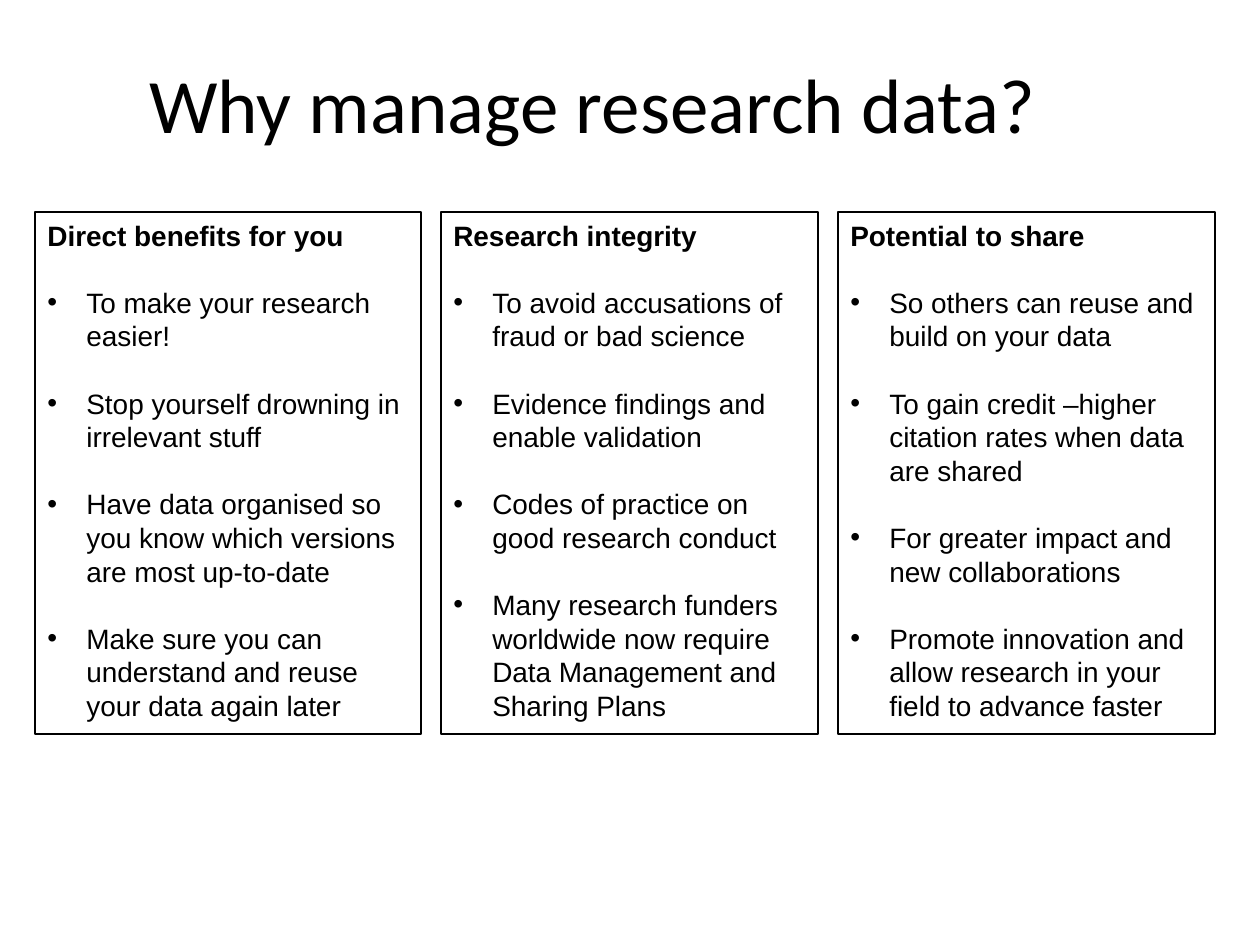
from lxml.etree import SubElement
from pptx import Presentation
from pptx.dml.color import RGBColor
from pptx.enum.shapes import MSO_SHAPE
from pptx.enum.text import MSO_ANCHOR, PP_ALIGN
from pptx.oxml.ns import qn
from pptx.util import Emu, Pt

BLACK = RGBColor(0x00, 0x00, 0x00)
PX = 914400 / 126

COLUMNS = [
    (386, "Direct benefits for you", [
        "To make your research easier!",
        "Stop yourself drowning in irrelevant stuff",
        "Have data organised so you know which versions are most up-to-date",
        "Make sure you can understand and reuse your data again later",
    ]),
    (377, "Research integrity", [
        "To avoid accusations of fraud or bad science",
        "Evidence findings and enable validation",
        "Codes of practice on good research conduct",
        "Many research funders worldwide now require Data Management and Sharing Plans",
    ]),
    (377, "Potential to share", [
        "So others can reuse and build on your data",
        "To gain credit –higher citation rates when data are shared",
        "For greater impact and new collaborations",
        "Promote innovation and allow research in your field to advance faster",
    ]),
]


def px(n):
    return Emu(round(n * PX))


class Deck:
    title_font, body_font = "Calibri", "Arial"
    title_size, body_size = Pt(44), Pt(16)
    line_height = Pt(19.2)
    indent = px(39)

    def __init__(self, width, height):
        self.prs = Presentation()
        self.prs.slide_width, self.prs.slide_height = px(width), px(height)
        self.s = self.prs.slides.add_slide(self.prs.slide_layouts[6])

    def format(self, p, font, size, bold=False):
        for r in p.runs:
            r.font.name, r.font.size, r.font.bold = font, size, bold
            r.font.color.rgb = BLACK

    def title(self, text, *box):
        tf = self.s.shapes.add_textbox(*map(px, box)).text_frame
        tf.word_wrap = True
        tf.vertical_anchor = MSO_ANCHOR.MIDDLE
        tf.text = text
        p = tf.paragraphs[0]
        p.alignment = PP_ALIGN.CENTER
        self.format(p, self.title_font, self.title_size)

    def bullet(self, p):
        pPr = p._p.get_or_add_pPr()
        pPr.set("marL", str(self.indent))
        pPr.set("indent", str(-self.indent))
        SubElement(pPr, qn("a:buFont"), typeface=self.body_font)
        SubElement(pPr, qn("a:buChar"), char="•")

    def panel(self, heading, items, *box):
        sp = self.s.shapes.add_shape(MSO_SHAPE.RECTANGLE, *map(px, box))
        sp.shadow.inherit = False
        sp.fill.background()
        sp.line.color.rgb = BLACK
        sp.line.width = Pt(0.75)
        tf = sp.text_frame
        tf.word_wrap = True
        tf.vertical_anchor = MSO_ANCHOR.TOP
        tf.text = "\n".join([heading, *items])
        for i, p in enumerate(tf.paragraphs):
            p.alignment = PP_ALIGN.LEFT
            p.line_spacing = self.line_height
            self.format(p, self.body_font, self.body_size, bold=i == 0)
            if i:
                p.space_before = self.line_height
                self.bullet(p)


def main():
    deck = Deck(1260, 945)
    deck.title("Why manage research data?", 26, 50, 1134, 106)
    left, gap = 35, 20
    for width, heading, items in COLUMNS:
        deck.panel(heading, items, left, 212, width, 522)
        left += width + gap
    deck.prs.save("out.pptx")


if __name__ == "__main__":
    main()
